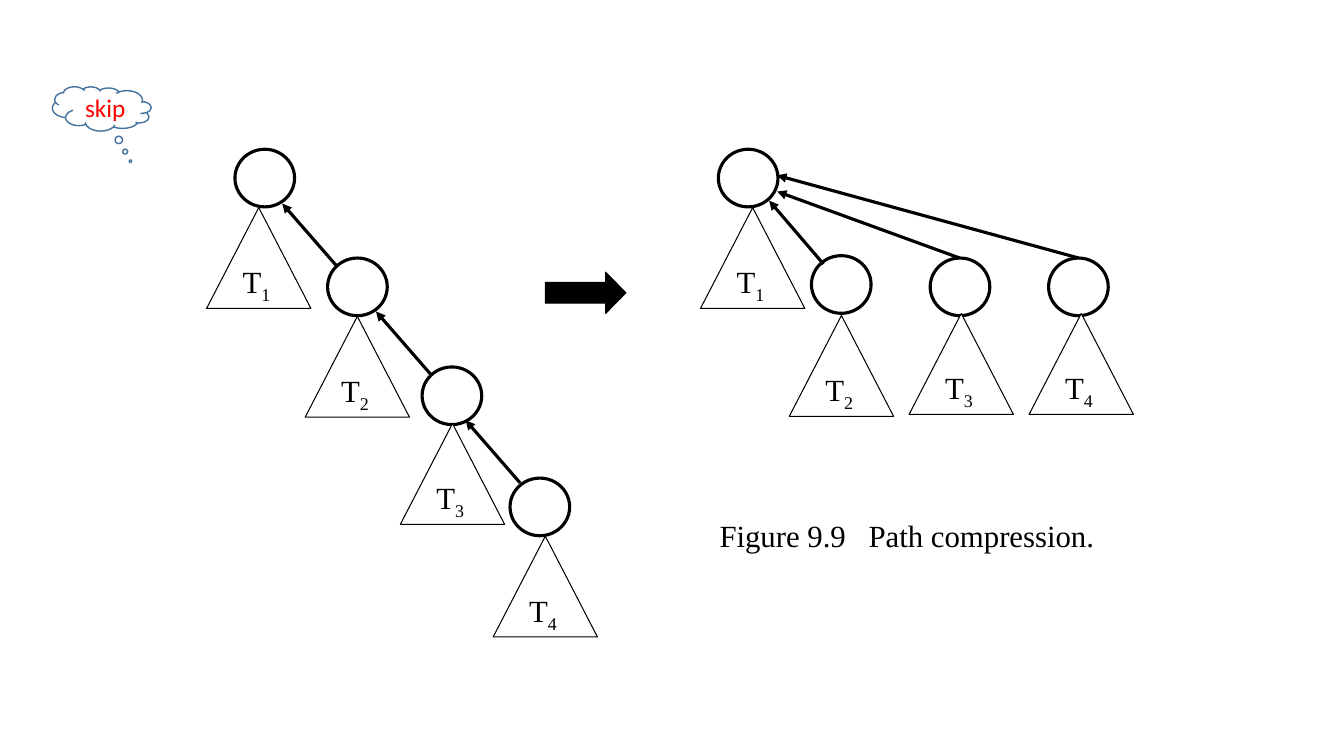
from dataclasses import dataclass

from lxml import etree
from pptx import Presentation
from pptx.dml.color import RGBColor
from pptx.enum.shapes import MSO_CONNECTOR, MSO_SHAPE
from pptx.enum.text import MSO_ANCHOR, MSO_AUTO_SIZE, PP_ALIGN
from pptx.oxml.ns import qn
from pptx.util import Pt

OVAL = MSO_SHAPE.OVAL
TRIANGLE = MSO_SHAPE.ISOSCELES_TRIANGLE
ARROW = MSO_SHAPE.RIGHT_ARROW
CLOUD = MSO_SHAPE.CLOUD_CALLOUT
STRAIGHT = MSO_CONNECTOR.STRAIGHT
TOP, MIDDLE = MSO_ANCHOR.TOP, MSO_ANCHOR.MIDDLE
LEFT, CENTER = PP_ALIGN.LEFT, PP_ALIGN.CENTER
GROW = MSO_AUTO_SIZE.SHAPE_TO_FIT_TEXT


@dataclass(frozen=True)
class Theme:
    ink: RGBColor = RGBColor(0, 0, 0)
    paper: RGBColor = RGBColor(255, 255, 255)
    red: RGBColor = RGBColor(255, 0, 0)
    blue: RGBColor = RGBColor(0x43, 0x73, 0x9E)
    serif: str = "Times New Roman"
    sans: str = "Calibri"
    label: float = 22
    note: float = 18
    thin: float = 0.75
    thick: float = 2.25


THEME = Theme()
NODE = (42.6, 41.2)
TREE = (74.5, 72)

# Left and top corners, in points
CHAIN_NODES = [(167.8, 106.6), (234, 184.3), (301.5, 262.1), (364.3, 341.5)]
CHAIN_TREES = [(147.6, 148.3), (218, 226), (286, 302.6), (352.3, 383)]
CHAIN_LINKS = [((240.5, 190), (201.6, 145.4)),
               ((307.4, 267.1), (268.6, 222.5)),
               ((371.5, 344.9), (332.6, 300.2))]
FLAT_NODES = [(513.1, 106.6), (579.6, 182.6), (664.4, 184.3), (749, 184.3)]
FLAT_TREES = [(500.4, 148.3), (563.8, 225.4), (649.4, 224), (735.1, 224)]
FLAT_LINKS = [((588.2, 188.6), (549.4, 143.3)),
              ((685.4, 184.3), (555.1, 136.8)),
              ((770.4, 184.3), (555.1, 125.3))]


def add_form(slide, kind, spot, size, fill, line, width):
    form = slide.shapes.add_shape(kind, *map(Pt, spot + size))
    form.shadow.inherit = False
    form.fill.solid()
    form.fill.fore_color.rgb = fill
    form.line.color.rgb = line
    form.line.width = Pt(width)
    return form


def add_run(para, text, size, face, color):
    run = para.add_run()
    run.text = text
    run.font.size = Pt(size)
    run.font.name = face
    run.font.color.rgb = color
    return run


def add_node(slide, spot):
    add_form(slide, OVAL, spot, NODE, THEME.paper, THEME.ink, THEME.thick)


def add_tree(slide, spot, index):
    """Draw a subtree triangle with its subscripted label."""
    tree = add_form(slide, TRIANGLE, spot, TREE,
                    THEME.paper, THEME.ink, THEME.thin)
    frame = tree.text_frame
    frame.vertical_anchor = TOP
    para = frame.paragraphs[0]
    para.alignment = LEFT
    add_run(para, "T", THEME.label, THEME.serif, THEME.ink)
    sub = add_run(para, str(index), THEME.label, THEME.serif, THEME.ink)
    sub.font._element.set("baseline", "-25000")


def add_link(slide, start, end):
    link = slide.shapes.add_connector(STRAIGHT, *map(Pt, start + end))
    link.line.color.rgb = THEME.ink
    link.line.width = Pt(THEME.thick)
    etree.SubElement(link.line._get_or_add_ln(), qn("a:tailEnd"),
                     type="triangle")
    etree.SubElement(link._element.spPr, qn("a:effectLst"))


def add_forest(slide, nodes, trees, links):
    for spot in nodes:
        add_node(slide, spot)
    for index, spot in enumerate(trees, 1):
        add_tree(slide, spot, index)
    for start, end in links:
        add_link(slide, start, end)


def add_arrow(slide):
    arrow = add_form(slide, ARROW, (389.5, 194.4), (57.6, 29.5),
                     THEME.ink, THEME.ink, THEME.thin)
    arrow.adjustments[1] = 0.49


def add_title(slide):
    """Write the caption, with a tab stop between number and title."""
    box = slide.shapes.add_textbox(*map(Pt, (506.9, 365.8, 285.1, 33.8)))
    frame = box.text_frame
    frame.word_wrap = False
    frame.auto_size = GROW
    para = frame.paragraphs[0]
    tabs = etree.SubElement(para._p.get_or_add_pPr(), qn("a:tabLst"))
    etree.SubElement(tabs, qn("a:tab"), pos=str(Pt(106.5)), algn="l")
    add_run(para, "Figure 9.9\tPath compression.",
            THEME.label, THEME.serif, THEME.ink)


def add_cloud(slide):
    cloud = add_form(slide, CLOUD, (37.4, 61.9), (70.6, 31.7),
                     THEME.paper, THEME.blue, 1)
    cloud.adjustments[0] = -0.29
    cloud.adjustments[1] = 1.18
    cloud._element.spPr.find(qn("a:xfrm")).set("flipH", "1")
    frame = cloud.text_frame
    frame.word_wrap = False
    frame.vertical_anchor = MIDDLE
    para = frame.paragraphs[0]
    para.alignment = CENTER
    add_run(para, "skip", THEME.note, THEME.sans, THEME.red)


def main():
    deck = Presentation()
    deck.slide_width, deck.slide_height = Pt(960), Pt(540)
    slide = deck.slides.add_slide(deck.slide_layouts[6])
    add_forest(slide, CHAIN_NODES, CHAIN_TREES, CHAIN_LINKS)
    add_forest(slide, FLAT_NODES, FLAT_TREES, FLAT_LINKS)
    add_arrow(slide)
    add_title(slide)
    add_cloud(slide)
    deck.save("out.pptx")


if __name__ == "__main__":
    main()
